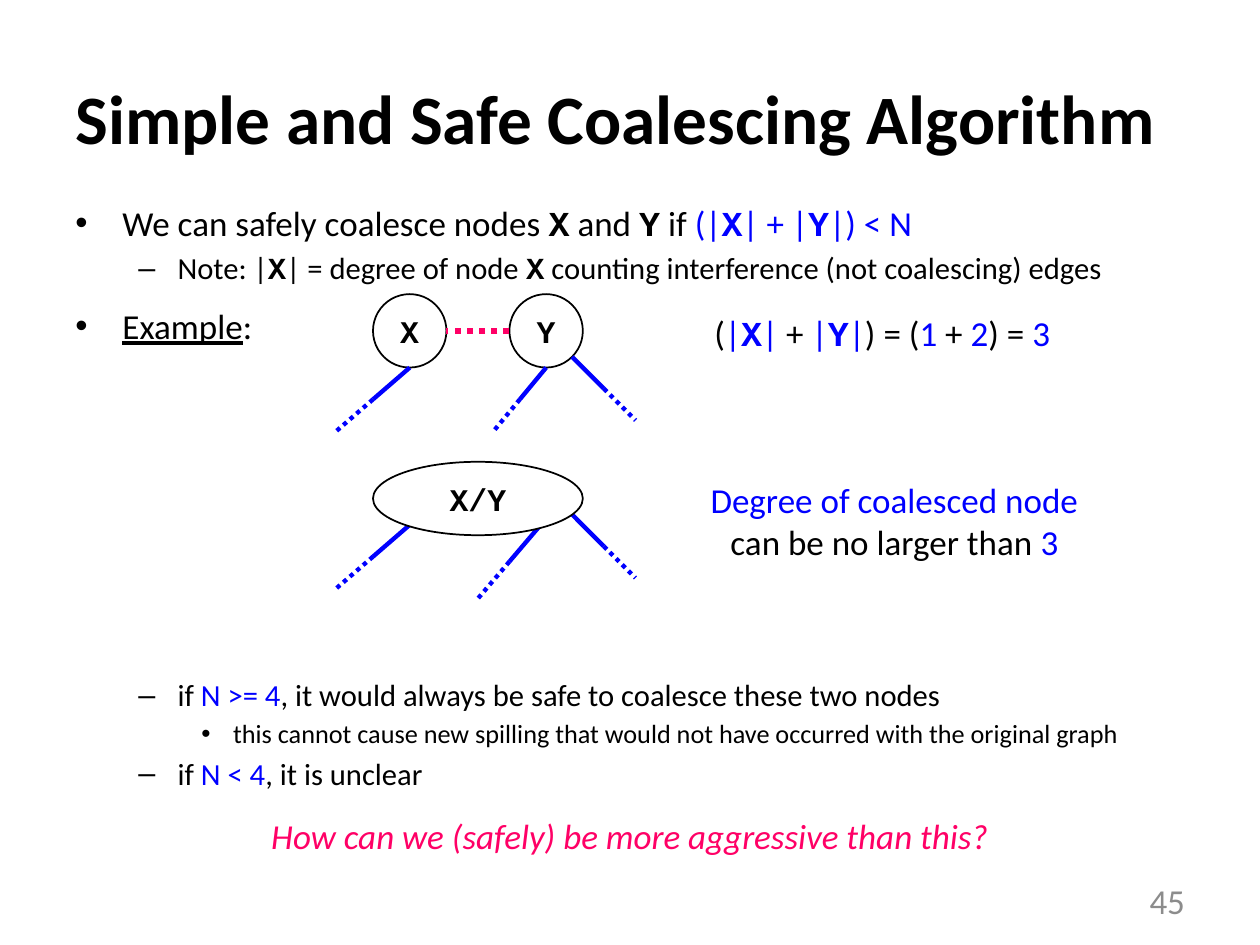
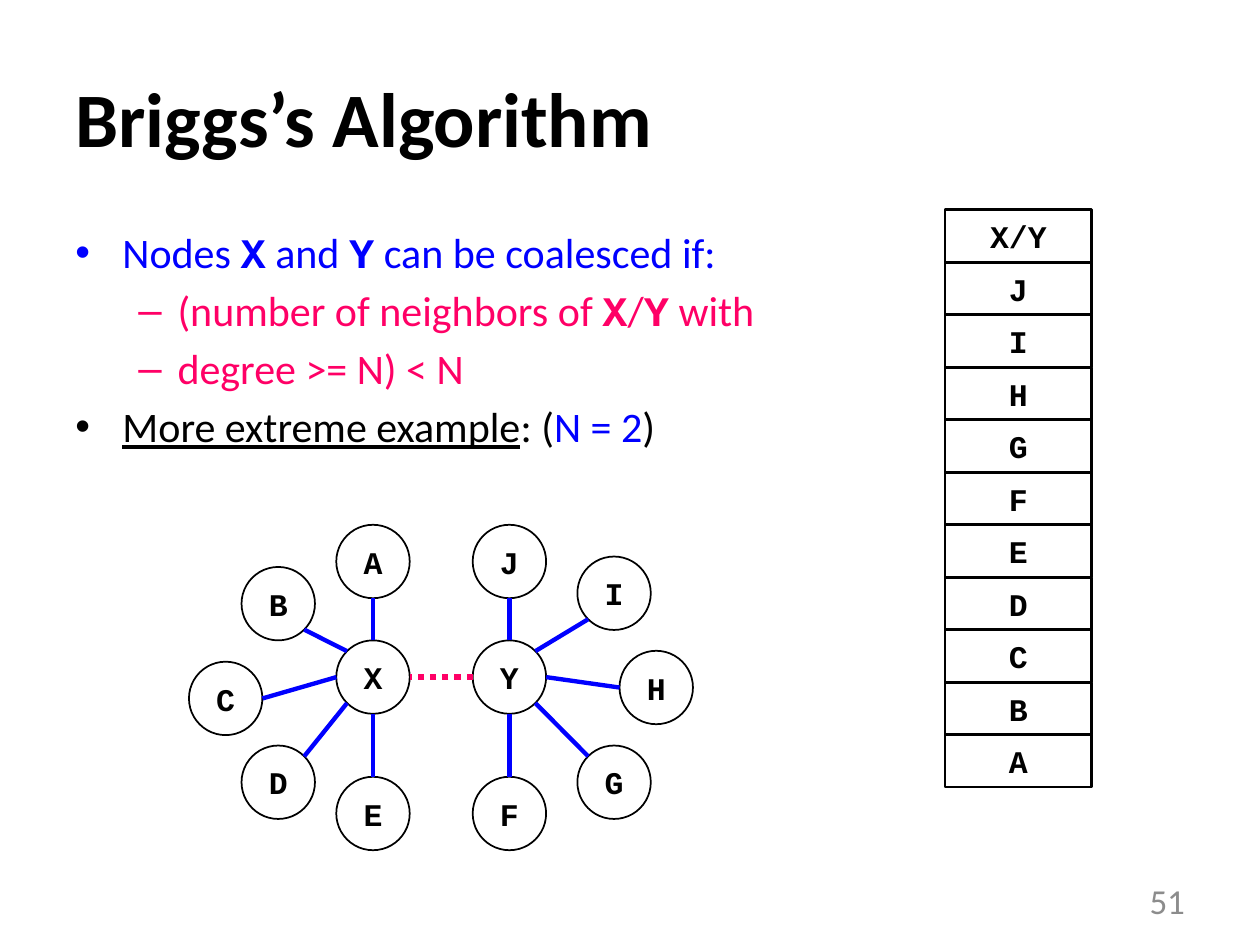
from dataclasses import dataclass
from math import cos, radians, sin

from lxml.etree import SubElement
from pptx import Presentation
from pptx.dml.color import RGBColor
from pptx.enum.dml import MSO_LINE
from pptx.enum.shapes import MSO_CONNECTOR, MSO_SHAPE
from pptx.enum.text import MSO_ANCHOR, PP_ALIGN
from pptx.oxml.ns import qn
from pptx.util import Cm, Pt


@dataclass(frozen=True)
class Theme:
    ink: RGBColor = RGBColor(0x00, 0x00, 0x00)
    paper: RGBColor = RGBColor(0xFF, 0xFF, 0xFF)
    blue: RGBColor = RGBColor(0x00, 0x00, 0xFF)
    pink: RGBColor = RGBColor(0xFF, 0x00, 0x66)
    grey: RGBColor = RGBColor(0x8C, 0x8C, 0x8C)
    sans: str = "Calibri"
    mono: str = "Courier New"
    title: float = 44
    long_title: float = 39.6
    large: float = 24
    body: float = 20
    note: float = 17.5
    detail: float = 15
    node: float = 18
    outline: float = 1
    cell_outline: float = 1.5
    edge: float = 2.5
    coalesce_edge: float = 3.5


THEME = Theme()
NODE_RADIUS = 0.74
# Bullet, left margin and hanging indent of each outline level
LEVELS = [("•", 0.95, 0.95), ("–", 2.06, 0.79), ("•", 3.18, 0.64)]
# Octants run counter-clockwise from the top of a node
TOP, LEFT, BOTTOM, BOTTOM_RIGHT, RIGHT = 0, 2, 4, 5, 6


@dataclass
class Run:
    text: str
    color: RGBColor | None = None
    mono: bool = False
    underline: bool = False


@dataclass
class Line:
    """A paragraph; gap is the space before it in points, by default in step with its size."""
    runs: list
    size: float = THEME.body
    color: RGBColor = THEME.ink
    level: int | None = None
    gap: float | None = None
    bold: bool = False
    italic: bool = False
    font: str = THEME.sans
    align: PP_ALIGN = PP_ALIGN.LEFT


def blue(text):
    return Run(text, THEME.blue)


def var(name, color=None):
    return Run(name, color, mono=True)


def degree_sum(color=None):
    """|X| + |Y| with blue terms and a plus sign in the given colour."""
    return [blue("|"), var("X", THEME.blue), blue("|"), Run(" + ", color),
            blue("|"), var("Y", THEME.blue), blue("|")]


def add_bullet(paragraph, level):
    mark, margin, hanging = LEVELS[level]
    properties = paragraph._p.get_or_add_pPr()
    properties.set("marL", str(Cm(margin)))
    properties.set("indent", str(-Cm(hanging)))
    SubElement(properties, qn("a:buFont")).set("typeface", "Arial")
    SubElement(properties, qn("a:buChar")).set("char", mark)


def write_line(paragraph, line, first):
    paragraph.alignment = line.align
    gap = 0.18 * line.size if line.gap is None else line.gap
    paragraph.space_before = Pt(0 if first else gap)
    if line.level is not None:
        paragraph.level = line.level
        add_bullet(paragraph, line.level)
    font = paragraph.font
    font.name, font.size = line.font, Pt(line.size)
    font.bold, font.italic = line.bold, line.italic
    font.color.rgb = line.color
    for part in line.runs:
        part = Run(part) if isinstance(part, str) else part
        run = paragraph.add_run()
        run.text = part.text
        if part.color is not None:
            run.font.color.rgb = part.color
        if part.mono:
            run.font.name, run.font.bold = THEME.mono, True
        if part.underline:
            run.font.underline = True


def add_text(slide, left, top, width, height, lines, anchor=MSO_ANCHOR.TOP, wrap=True):
    box = slide.shapes.add_textbox(Cm(left), Cm(top), Cm(width), Cm(height))
    frame = box.text_frame
    frame.word_wrap = wrap
    frame.vertical_anchor = anchor
    for index, line in enumerate(lines):
        paragraph = frame.add_paragraph() if index else frame.paragraphs[0]
        write_line(paragraph, line, first=index == 0)


def add_labelled(slide, preset, left, top, width, height, label,
                 outline=THEME.outline, fill=None):
    shape = slide.shapes.add_shape(preset, Cm(left), Cm(top), Cm(width), Cm(height))
    shape.shadow.inherit = False
    if fill is None:
        shape.fill.background()
    else:
        shape.fill.solid()
        shape.fill.fore_color.rgb = fill
    shape.line.color.rgb = THEME.ink
    shape.line.width = Pt(outline)
    frame = shape.text_frame
    frame.margin_left = frame.margin_right = frame.margin_top = frame.margin_bottom = 0
    frame.vertical_anchor = MSO_ANCHOR.MIDDLE
    write_line(frame.paragraphs[0],
               Line([label], THEME.node, bold=True, font=THEME.mono, align=PP_ALIGN.CENTER),
               first=True)


def add_node(slide, label, center):
    x, y = center
    add_labelled(slide, MSO_SHAPE.OVAL, x - NODE_RADIUS, y - NODE_RADIUS,
                 2 * NODE_RADIUS, 2 * NODE_RADIUS, label)


def rim(center, octant):
    """Point on a node's outline in the given octant."""
    angle = radians(45 * octant)
    return center[0] - NODE_RADIUS * sin(angle), center[1] - NODE_RADIUS * cos(angle)


def add_edge(slide, start, end, color=THEME.blue, width=THEME.edge, dotted=False):
    edge = slide.shapes.add_connector(MSO_CONNECTOR.STRAIGHT, *map(Cm, start + end))
    edge.line.color.rgb = color
    edge.line.width = Pt(width)
    if dotted:
        edge.line.dash_style = MSO_LINE.ROUND_DOT
    SubElement(edge._element.spPr, qn("a:effectLst"))


def add_coalesce_edge(slide, x_center, y_center):
    add_edge(slide, rim(y_center, LEFT), rim(x_center, RIGHT),
             THEME.pink, THEME.coalesce_edge, dotted=True)


def add_open_edge(slide, start, step):
    """An edge that fades out: one solid step, then one dotted step."""
    middle = start[0] + step[0], start[1] + step[1]
    end = middle[0] + step[0], middle[1] + step[1]
    add_edge(slide, start, middle)
    add_edge(slide, middle, end, dotted=True)


def add_slide(deck, title, number, title_size=THEME.title):
    slide = deck.slides.add_slide(deck.slide_layouts[6])
    add_text(slide, 1.27, 0.76, 22.86, 3.18, [Line([title], title_size, bold=True)],
             MSO_ANCHOR.MIDDLE)
    add_text(slide, 18.21, 17.65, 5.93, 1.02,
             [Line([number], color=THEME.grey, align=PP_ALIGN.RIGHT)], MSO_ANCHOR.MIDDLE)
    return slide


def build_simple_coalescing(deck):
    slide = add_slide(deck, "Simple and Safe Coalescing Algorithm", "45", THEME.long_title)
    add_text(slide, 1.27, 3.94, 22.86, 13.08, [
        Line(["We can safely coalesce nodes ", var("X"), " and ", var("Y"), " if ",
              blue("("), *degree_sum(THEME.blue), blue(") < N")], level=0),
        Line(["Note: |", var("X"), "| = degree of node ", var("X"),
              " counting interference (not coalescing) edges"], THEME.note, level=1),
        Line([Run("Example", underline=True), ":"], level=0, gap=10.6),
        Line(["if ", blue("N >= 4"), ", it would always be safe to coalesce these two nodes"],
             THEME.note, level=1, gap=188.5),
        Line(["this cannot cause new spilling that would not have occurred "
              "with the original graph"], THEME.detail, level=2),
        Line(["if ", blue("N < 4"), ", it is unclear"], THEME.note, level=1),
        Line(["How can we (safely) be more aggressive than this?"], color=THEME.pink,
             gap=13.3, italic=True, align=PP_ALIGN.CENTER),
    ])

    x_center, y_center = (8.26, 6.67), (11.01, 6.67)
    add_node(slide, "X", x_center)
    add_node(slide, "Y", y_center)
    add_coalesce_edge(slide, x_center, y_center)
    open_edges = [
        (rim(x_center, BOTTOM), (-0.74, 0.64)),
        (rim(y_center, BOTTOM), (-0.53, 0.64)),
        (rim(y_center, BOTTOM_RIGHT), (0.64, 0.64)),
        ((8.26, 10.58), (-0.74, 0.64)),
        ((10.9, 10.58), (-0.63, 0.74)),
        ((11.53, 10.37), (0.64, 0.64)),
    ]
    for start, step in open_edges:
        add_open_edge(slide, start, step)
    add_labelled(slide, MSO_SHAPE.OVAL, 7.52, 9.31, 4.23, 1.48, "X/Y", fill=THEME.paper)

    add_text(slide, 14.15, 6.15, 7.34, 1.12, [
        Line(["(", *degree_sum(), ") = (", blue("1"), " + ", blue("2"), ") = ", blue("3")]),
    ], wrap=False)
    add_text(slide, 14.07, 9.53, 7.92, 1.96, [
        Line([blue("Degree of coalesced node"), " can be no larger than ", blue("3")],
             align=PP_ALIGN.CENTER),
    ])


def build_briggs(deck):
    slide = add_slide(deck, "Briggs’s Algorithm", "51")
    add_text(slide, 1.27, 4.45, 22.86, 12.57, [
        Line(["Nodes ", var("X"), " and ", var("Y"), " can be coalesced if:"],
             THEME.large, THEME.blue, level=0),
        Line(["(number of neighbors of ", var("X"), "/", var("Y"), " with"],
             THEME.large, THEME.pink, level=1),
        Line(["degree >= N) < N"], THEME.large, THEME.pink, level=1),
        Line([Run("More extreme example", underline=True), ": (", blue("N = 2"), ")"],
             THEME.large, level=0),
    ])

    x_center, y_center = (7.52, 13.65), (10.27, 13.65)
    # Each hub's neighbours: name, centre and the hub octant its edge leaves from
    hubs = [
        ("X", x_center, [("A", (7.52, 11.32), 0), ("B", (5.61, 12.17), 1),
                         ("C", (4.55, 14.08), 2), ("D", (5.61, 15.77), 3),
                         ("E", (7.52, 16.4), 4)]),
        ("Y", y_center, [("F", (10.27, 16.4), 4), ("G", (12.38, 15.77), 5),
                         ("H", (13.23, 13.86), 6), ("I", (12.38, 11.96), 7),
                         ("J", (10.27, 11.32), TOP)]),
    ]
    for hub, hub_center, neighbours in hubs:
        add_node(slide, hub, hub_center)
        for name, center, octant in neighbours:
            add_node(slide, name, center)
            add_edge(slide, rim(hub_center, octant), rim(center, octant + 4))
    add_coalesce_edge(slide, x_center, y_center)

    stack = ["X/Y", *"JIHGFEDCBA"]
    cell_height = 11.64 / len(stack)
    for row, name in enumerate(stack):
        add_labelled(slide, MSO_SHAPE.RECTANGLE, 19.05, 4.23 + row * cell_height,
                     2.96, cell_height, name, THEME.cell_outline)


def main():
    deck = Presentation()
    deck.slide_width, deck.slide_height = Cm(25.4), Cm(19.05)
    build_simple_coalescing(deck)
    build_briggs(deck)
    deck.save("out.pptx")


if __name__ == "__main__":
    main()
